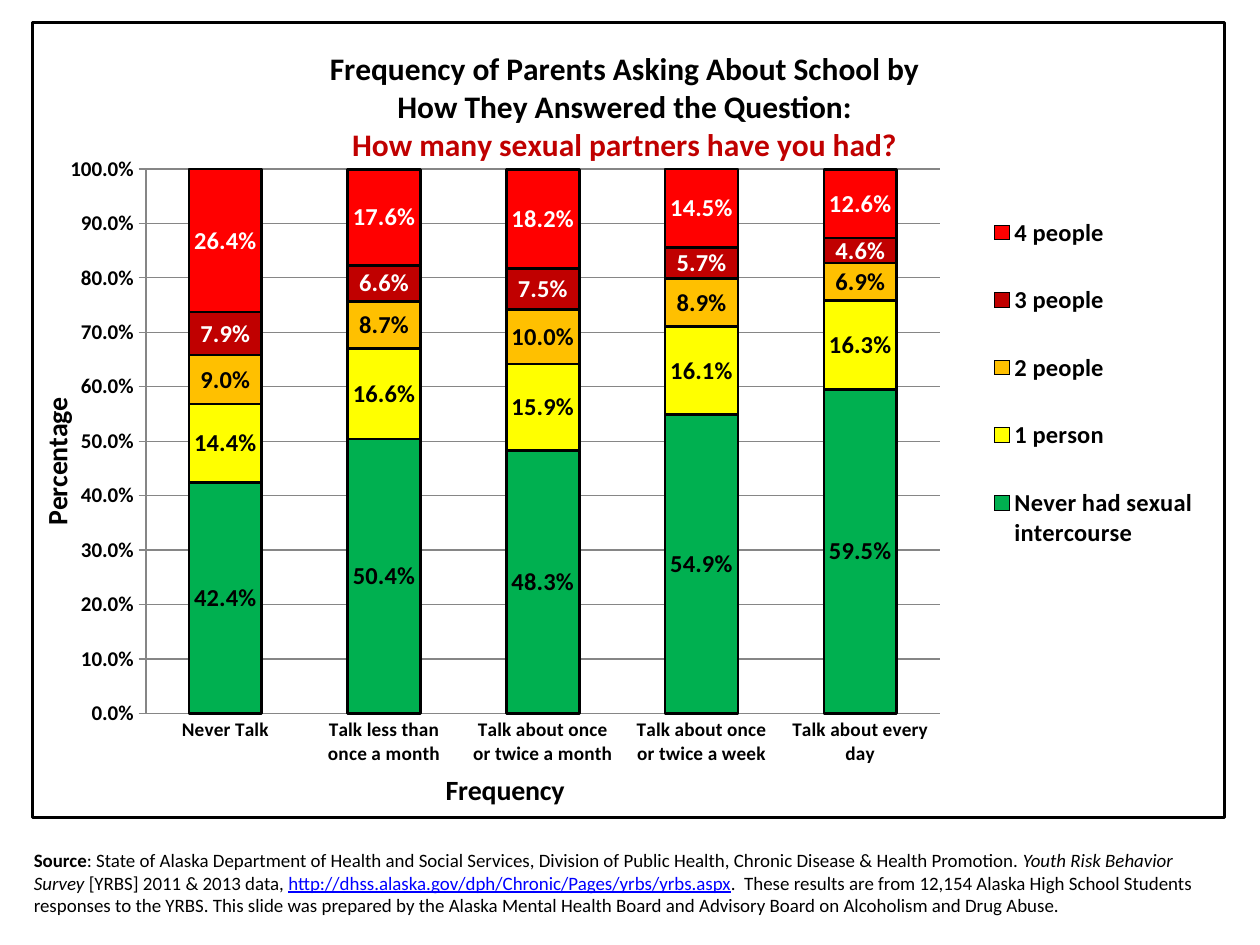
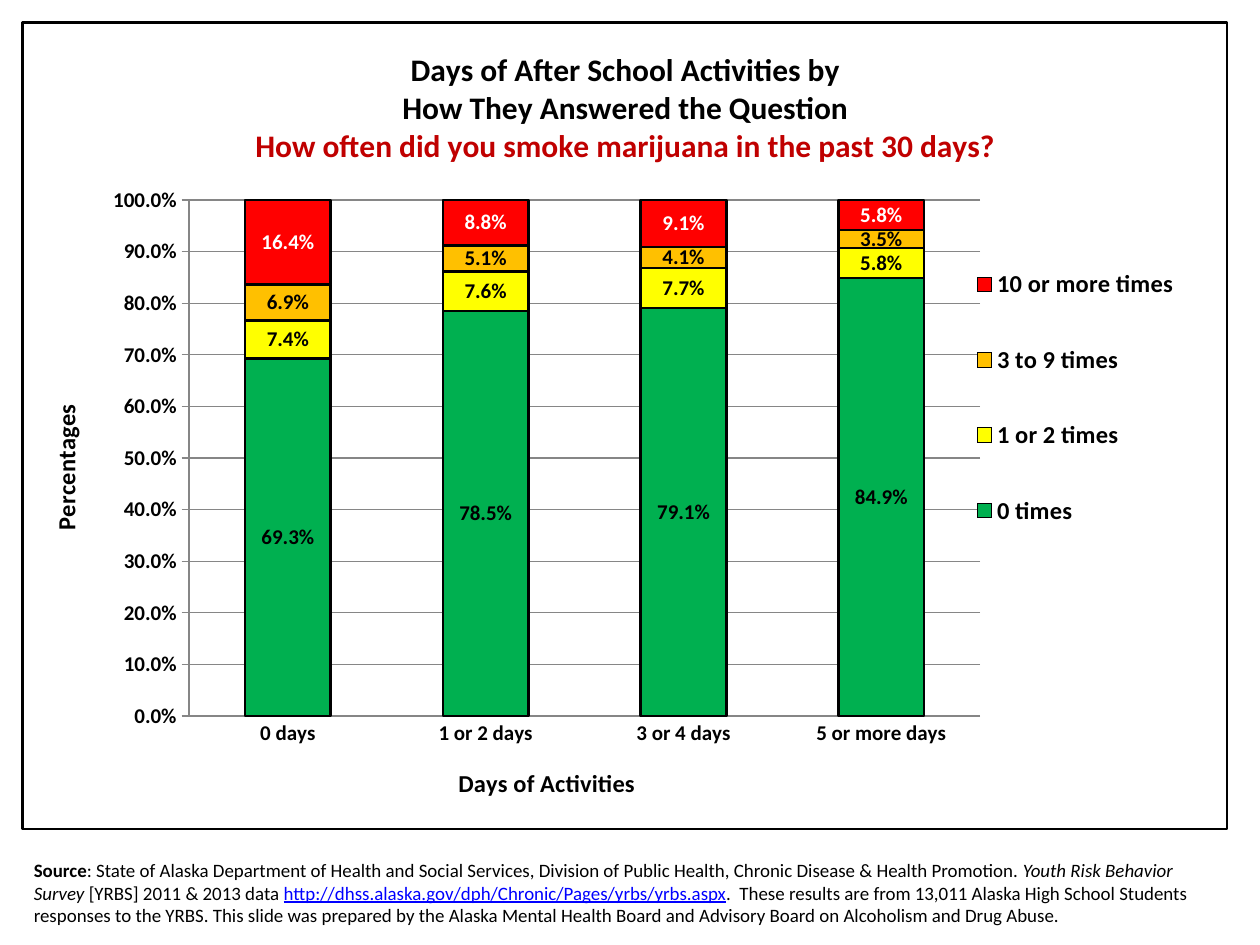
from lxml import etree
from pptx import Presentation
from pptx.chart.data import CategoryChartData
from pptx.dml.color import RGBColor
from pptx.enum.chart import XL_CHART_TYPE, XL_LEGEND_POSITION, XL_TICK_MARK
from pptx.enum.text import MSO_ANCHOR, PP_ALIGN
from pptx.oxml import parse_xml
from pptx.oxml.ns import nsdecls, qn
from pptx.util import Inches, Pt

STACKED = XL_CHART_TYPE.COLUMN_STACKED
LEGEND_RIGHT = XL_LEGEND_POSITION.RIGHT
TICK_NONE, TICK_OUT = XL_TICK_MARK.NONE, XL_TICK_MARK.OUTSIDE
MIDDLE, CENTER = MSO_ANCHOR.MIDDLE, PP_ALIGN.CENTER

# Shared look
FONT = "Calibri"
BLACK = RGBColor(0x00, 0x00, 0x00)
WHITE = RGBColor(0xFF, 0xFF, 0xFF)
GREEN = RGBColor(0x00, 0xB0, 0x50)
YELLOW = RGBColor(0xFF, 0xFF, 0x00)
AMBER = RGBColor(0xFF, 0xC0, 0x00)
DARK_RED = RGBColor(0xC0, 0x00, 0x00)
RED = RGBColor(0xFF, 0x00, 0x00)
LINK_BLUE = RGBColor(0x00, 0x00, 0xFF)
GRID_GRAY = RGBColor(0x86, 0x86, 0x86)
PERCENT = "0.0%"

# Shared source note
AGENCY = (": State of Alaska Department of Health and Social Services, Division of "
          "Public Health, Chronic Disease & Health Promotion. ")
SURVEY = "Youth Risk Behavior Survey"
SURVEY_URL = "http://dhss.alaska.gov/dph/Chronic/Pages/yrbs/yrbs.aspx"
PREPARED = (".  These results are from {} Alaska High School Students responses to the "
            "YRBS. This slide was prepared by the Alaska Mental Health Board and "
            "Advisory Board on Alcoholism and Drug Abuse.")

# Content of the two slides; places inside a chart are percentages of its area
PARTNERS = {
    "at": (0.25, 0.17, 9.48, 6.33),
    "title": ["Frequency of Parents Asking About School by",
              "How They Answered the Question:",
              "How many sexual partners have you had?"],
    "title_at": (24.6, 2.7),
    "plot_at": (9.5, 18.4, 66.6, 68.5),
    "legend_at": (79.5, 19.8, 19, 51),
    "category_axis": ("Frequency", (34.2, 93.5)),
    "value_axis": ("Percentage", (0, 46.5)),
    "axis_title_size": 16, "category_size": 11, "label_size": 14, "gap": 118,
    "categories": ["Never Talk", "Talk less than once a month",
                   "Talk about once or twice a month",
                   "Talk about once or twice a week", "Talk about every day"],
    "series": [
        ("Never had sexual intercourse", GREEN, BLACK, (0.424, 0.504, 0.483, 0.549, 0.595)),
        ("1 person", YELLOW, BLACK, (0.144, 0.166, 0.159, 0.161, 0.163)),
        ("2 people", AMBER, BLACK, (0.09, 0.087, 0.1, 0.089, 0.069)),
        ("3 people", DARK_RED, WHITE, (0.079, 0.066, 0.075, 0.057, 0.046)),
        ("4 people", RED, WHITE, (0.264, 0.176, 0.182, 0.145, 0.126)),
    ],
    "note_top": 6.67, "data_years": " [YRBS] 2011 & 2013 data, ", "students": "12,154",
}
MARIJUANA = {
    "at": (0.17, 0.17, 9.58, 6.42),
    "title": ["Days of After School Activities by",
              "How They Answered the Question",
              "How often did you smoke marijuana in the past 30 days?"],
    "title_at": (19, 2.8),
    "plot_at": (13.8, 22, 65.7, 64),
    "legend_at": (77.4, 25, 20, 43),
    "category_axis": ("Days of Activities", (35.8, 91.7)),
    "value_axis": ("Percentages", (1.8, 46.8)),
    "axis_title_size": 14, "category_size": 12, "label_size": 12, "gap": 131,
    "categories": ["0 days", "1 or 2 days", "3 or 4 days", "5 or more days"],
    "series": [
        ("0 times", GREEN, BLACK, (0.693, 0.785, 0.791, 0.849)),
        ("1 or 2 times", YELLOW, BLACK, (0.074, 0.076, 0.077, 0.058)),
        ("3 to 9 times", AMBER, BLACK, (0.069, 0.051, 0.041, 0.035)),
        ("10 or more times", RED, WHITE, (0.164, 0.088, 0.091, 0.058)),
    ],
    "note_top": 6.75, "data_years": " [YRBS] 2011 & 2013 data ", "students": "13,011",
}


def style_font(font, size, color=BLACK, bold=False):
    font.name = FONT
    font.size = Pt(size)
    font.bold = bold
    font.color.rgb = color


def style_line(line, color, width):
    line.color.rgb = color
    line.width = Pt(width)


def add_span(para, text, size, color=BLACK, bold=False):
    span = para.add_run()
    span.text = text
    style_font(span.font, size, color, bold)
    return span


def place(element, spot, inner=False):
    """Give a chart part a manual layout: x, y and, if present, w, h in percent."""
    for old in element.findall(qn("c:layout")):
        element.remove(old)
    layout = parse_xml(f"<c:layout {nsdecls('c')}><c:manualLayout/></c:layout>")
    settings = [("layoutTarget", "inner")] if inner else []
    settings += [("xMode", "edge"), ("yMode", "edge")]
    settings += [(side, round(share / 100, 3)) for side, share in zip("xywh", spot)]
    for name, value in settings:
        etree.SubElement(layout[0], qn(f"c:{name}")).set("val", str(value))
    overlay = element.find(qn("c:overlay"))
    if overlay is None:
        element.insert(0, layout)
    else:
        overlay.addprevious(layout)


def add_frame(chart):
    """Draw the white chart area with its black border."""
    frame = parse_xml(
        f"<c:spPr {nsdecls('c', 'a')}>"
        f'<a:solidFill><a:srgbClr val="{WHITE}"/></a:solidFill>'
        f'<a:ln w="{Pt(1.5)}"><a:solidFill><a:srgbClr val="{BLACK}"/></a:solidFill></a:ln>'
        "</c:spPr>")
    chart.element.find(qn("c:chart")).addnext(frame)


def add_chart_title(chart, lines, spot):
    frame = chart.chart_title.text_frame
    for number, text in enumerate(lines):
        para = frame.add_paragraph() if number else frame.paragraphs[0]
        para.alignment = CENTER
        color = DARK_RED if text == lines[-1] else BLACK
        add_span(para, text, 18, color, bold=True)
    place(chart.chart_title.element, spot)


def style_axis(axis, title, title_size, tick_size, tick_mark):
    text, spot = title
    add_span(axis.axis_title.text_frame.paragraphs[0], text, title_size, bold=True)
    place(axis.axis_title.element, spot)
    style_font(axis.tick_labels.font, tick_size, bold=True)
    axis.major_tick_mark = tick_mark
    axis.minor_tick_mark = TICK_NONE
    style_line(axis.format.line, GRID_GRAY, 0.75)


def style_value_axis(axis):
    axis.minimum_scale, axis.maximum_scale, axis.major_unit = 0, 1, 0.1
    axis.has_major_gridlines = True
    style_line(axis.major_gridlines.format.line, GRID_GRAY, 0.75)
    axis.tick_labels.number_format = PERCENT
    axis.tick_labels.number_format_is_linked = False
    body = axis.axis_title.text_frame._txBody.find(qn("a:bodyPr"))
    body.set("rot", "-5400000")
    body.set("vert", "horz")


def style_series(series, fill, label_color, label_size):
    series.format.fill.solid()
    series.format.fill.fore_color.rgb = fill
    style_line(series.format.line, BLACK, 1.5)
    labels = series.data_labels
    labels.show_value = True
    labels.number_format = PERCENT
    labels.number_format_is_linked = False
    style_font(labels.font, label_size, label_color, bold=True)


def add_stacked_chart(page, topic):
    data = CategoryChartData(number_format=PERCENT)
    data.categories = topic["categories"]
    for name, _, _, values in topic["series"]:
        data.add_series(name, values)
    chart = page.shapes.add_chart(STACKED, *map(Inches, topic["at"]), data).chart
    style_font(chart.font, 10)
    add_frame(chart)
    add_chart_title(chart, topic["title"], topic["title_at"])

    # Axes
    title_size = topic["axis_title_size"]
    style_axis(chart.category_axis, topic["category_axis"], title_size,
               topic["category_size"], TICK_NONE)
    style_axis(chart.value_axis, topic["value_axis"], title_size, 12, TICK_OUT)
    style_value_axis(chart.value_axis)

    # Columns
    plot = chart.plots[0]
    plot.gap_width, plot.overlap, plot.vary_by_categories = topic["gap"], 100, False
    for series, (_, fill, label_color, _) in zip(plot.series, topic["series"]):
        style_series(series, fill, label_color, topic["label_size"])
    place(chart.element.find(".//" + qn("c:plotArea")), topic["plot_at"], inner=True)

    # Legend
    chart.has_legend = True
    legend = chart.legend
    legend.position = LEGEND_RIGHT
    legend.include_in_layout = False
    style_font(legend.font, 14, bold=True)
    place(chart.element.find(".//" + qn("c:legend")), topic["legend_at"])


def add_source_note(page, topic):
    box = page.shapes.add_textbox(Inches(0.17), Inches(topic["note_top"]),
                                  Inches(9.67), Inches(0.67))
    box.text_frame.word_wrap = True
    box.text_frame.vertical_anchor = MIDDLE
    para = box.text_frame.paragraphs[0]
    size = 10.8
    add_span(para, "Source", size, bold=True)
    add_span(para, AGENCY, size)
    add_span(para, SURVEY, size).font.italic = True
    add_span(para, topic["data_years"], size)
    add_span(para, SURVEY_URL, size, LINK_BLUE).font.underline = True
    add_span(para, PREPARED.format(topic["students"]), size)


def main():
    deck = Presentation()
    deck.slide_width, deck.slide_height = Inches(10), Inches(7.5)
    blank = deck.slide_layouts[6]
    for topic in (PARTNERS, MARIJUANA):
        page = deck.slides.add_slide(blank)
        add_source_note(page, topic)
        add_stacked_chart(page, topic)
    deck.save("out.pptx")


if __name__ == "__main__":
    main()
